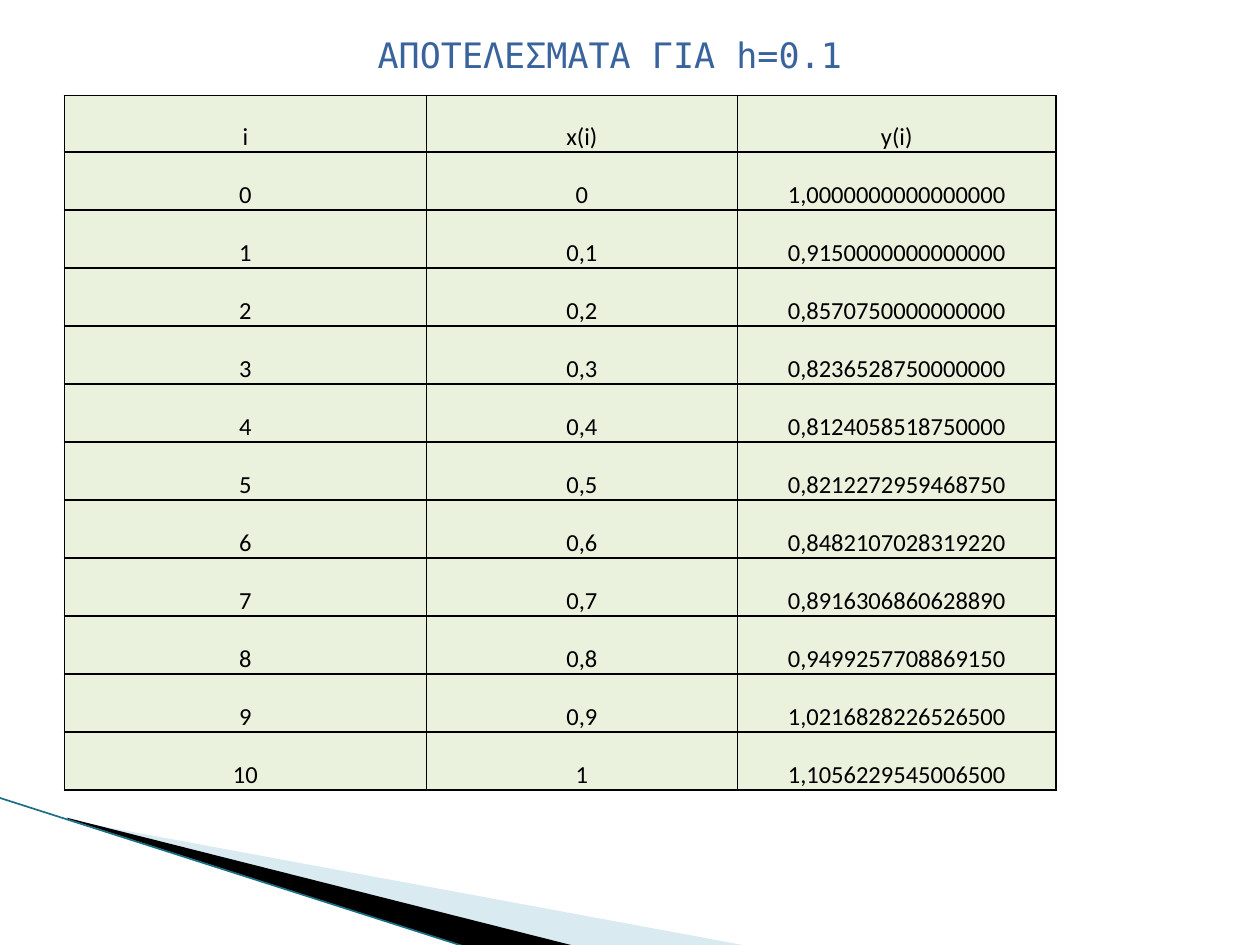
import pptx
import pptx.dml.color
import pptx.enum.shapes
import pptx.enum.text
import pptx.oxml
import pptx.oxml.ns
import pptx.util
from lxml import etree

Pt = pptx.util.Pt
COLORS = {
    "title": "39639D",
    "text": "000000",
    "cell": "EAF1DD",
    "border": "000000",
    "light_wedge": "A0CBDC",
    "dark_wedge": "000000",
    "edge": "1B6F84",
}


def color(name):
    return pptx.dml.color.RGBColor.from_string(COLORS[name])


class SlideBuilder:
    title_font = "DejaVu Sans Mono"
    table_font = "Calibri"

    def __init__(self, slide):
        self.slide = slide

    def style_paragraph(self, paragraph, font_name, size, color_name):
        paragraph.alignment = pptx.enum.text.PP_ALIGN.CENTER
        for run in paragraph.runs:
            run.font.name = font_name
            run.font.size = Pt(size)
            run.font.color.rgb = color(color_name)

    def title(self, text, left, top, width, height):
        shape = self.slide.shapes.title
        shape.left, shape.top = Pt(left), Pt(top)
        shape.width, shape.height = Pt(width), Pt(height)
        shape.text_frame.text = text
        shape.text_frame.auto_size = pptx.enum.text.MSO_AUTO_SIZE.SHAPE_TO_FIT_TEXT
        self.style_paragraph(shape.text_frame.paragraphs[0], self.title_font, 20, "title")

    def wedge(self, points, color_name, opacity=100):
        corners = [(Pt(x), Pt(y)) for x, y in points]
        builder = self.slide.shapes.build_freeform(*corners[0], scale=1.0)
        builder.add_line_segments(corners[1:], close=True)
        shape = builder.convert_to_shape()
        shape.shadow.inherit = False
        shape.fill.solid()
        shape.fill.fore_color.rgb = color(color_name)
        shape.line.fill.background()
        if opacity < 100:
            fill_color = shape.fill._xPr.find(".//" + pptx.oxml.ns.qn("a:srgbClr"))
            alpha = etree.SubElement(fill_color, pptx.oxml.ns.qn("a:alpha"))
            alpha.set("val", str(opacity * 1000))

    def line(self, start, end, color_name, width):
        connector = self.slide.shapes.add_connector(
            pptx.enum.shapes.MSO_CONNECTOR.STRAIGHT,
            *(Pt(value) for value in start + end))
        connector.line.color.rgb = color(color_name)
        connector.line.width = Pt(width)
        etree.SubElement(connector._element.spPr, pptx.oxml.ns.qn("a:effectLst"))

    def table(self, rows, left, top, column_widths, row_heights):
        table = self.slide.shapes.add_table(
            len(rows), len(column_widths), Pt(left), Pt(top),
            Pt(sum(column_widths)), Pt(sum(row_heights))).table
        table.first_row = table.horz_banding = False
        for column, width in zip(table.columns, column_widths):
            column.width = Pt(width)
        for row, height, values in zip(table.rows, row_heights, rows):
            row.height = Pt(height)
            for cell, value in zip(row.cells, values):
                self.cell(cell, value)

    def cell(self, cell, text):
        cell.text_frame.text = text
        cell.vertical_anchor = pptx.enum.text.MSO_ANCHOR.BOTTOM
        cell.margin_left = cell.margin_right = Pt(5)
        cell.margin_top = cell.margin_bottom = 0
        paragraph = cell.text_frame.paragraphs[0]
        paragraph.line_spacing = 1.15
        self.style_paragraph(paragraph, self.table_font, 14, "text")
        # Borders come before the fill in the cell properties
        properties = cell._tc.get_or_add_tcPr()
        for side in ("lnL", "lnR", "lnT", "lnB"):
            properties.append(pptx.oxml.parse_xml(
                f'<a:{side} {pptx.oxml.ns.nsdecls("a")} w="{Pt(1)}"><a:solidFill>'
                f'<a:srgbClr val="{COLORS["border"]}"/></a:solidFill></a:{side}>'))
        cell.fill.solid()
        cell.fill.fore_color.rgb = color("cell")


def main():
    presentation = pptx.Presentation()
    presentation.slide_width, presentation.slide_height = Pt(720), Pt(540)
    slide = presentation.slides.add_slide(presentation.slide_layouts[5])
    builder = SlideBuilder(slide)

    # Corner decoration
    builder.wedge([(39.6, 468.72), (428.4, 540.72), (328.32, 540.72), (39.6, 468)],
                  "light_wedge", opacity=40)
    builder.wedge([(38.16, 467.28), (329.04, 540.72), (267.84, 541.44), (38.88, 468)],
                  "dark_wedge")
    builder.line((-0.72, 455.76), (267.12, 541.44), "edge", 0.95)

    # Title
    builder.title("ΑΠΟΤΕΛΕΣΜΑΤΑ ΓΙΑ h=0.1", 167, 15.1, 363, 31.7)

    # Results: x grows by 0.1 at each step
    y_values = [
        "1,0000000000000000", "0,9150000000000000", "0,8570750000000000",
        "0,8236528750000000", "0,8124058518750000", "0,8212272959468750",
        "0,8482107028319220", "0,8916306860628890", "0,9499257708869150",
        "1,0216828226526500", "1,1056229545006500",
    ]
    rows = [("i", "x(i)", "y(i)")]
    for i, y_value in enumerate(y_values):
        rows.append((str(i), f"{i / 10:g}".replace(".", ","), y_value))
    builder.table(rows, 36.8, 54.6, [206.9, 177.7, 182.2],
                  [32.4] + [33.14] * len(y_values))

    presentation.save("out.pptx")


if __name__ == "__main__":
    main()
